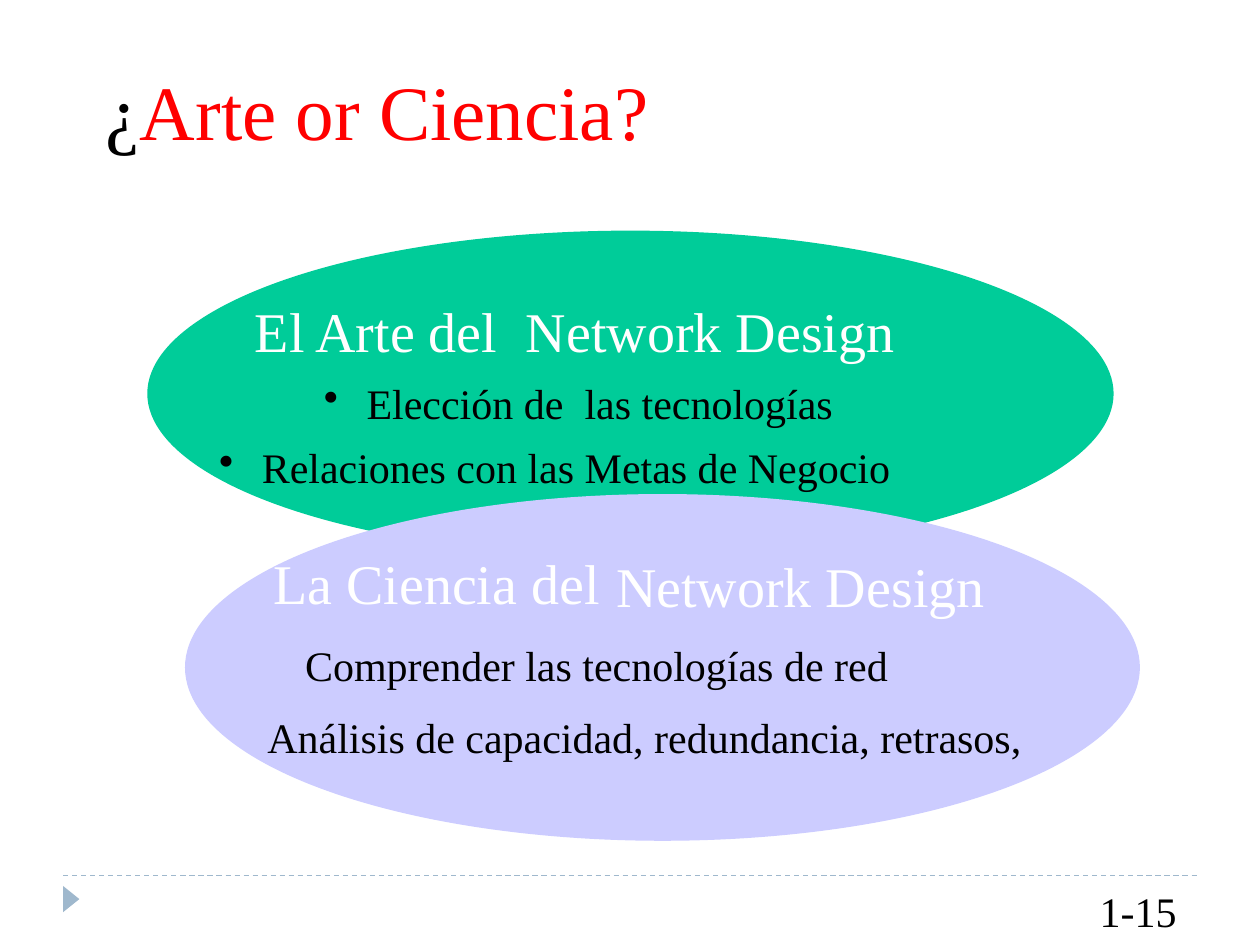
"""Build the slide on the art and science of network design."""
from lxml.etree import SubElement
from pptx import Presentation
from pptx.dml.color import RGBColor
from pptx.enum.dml import MSO_LINE
from pptx.enum.shapes import MSO_CONNECTOR, MSO_SHAPE
from pptx.oxml.ns import qn
from pptx.util import Cm, Pt

BLACK = RGBColor(0, 0, 0)
WHITE = RGBColor(255, 255, 255)
RED = RGBColor(255, 0, 0)
GREEN = RGBColor(0, 0xCC, 0x99)
LILAC = RGBColor(0xCC, 0xCC, 0xFF)
STEEL = RGBColor(0x9F, 0xB8, 0xCD)

FONT = "Times New Roman"
HANG = Cm(0.86)
STYLES = {
    "title": {"size": 44, "line": 46, "before": 2.3, "tall": 1.63},
    "head": {"size": 32, "line": 33.7, "before": 1.7, "tall": 1.19},
    "body": {"size": 24, "line": 25.5, "before": 1.3, "tall": 0.91},
}
SHAPES = [
    (MSO_SHAPE.ISOSCELES_TRIANGLE, (1.17, 17.96, 0.53, 0.33), 90, STEEL),
    (MSO_SHAPE.OVAL, (2.97, 4.65, 19.48, 6.57), 0, GREEN),
    (MSO_SHAPE.OVAL, (3.73, 9.96, 19.25, 6.99), 0, LILAC),
]
TEXTS = [
    ("title", 2.13, 1.52, 11.25, False, [("¿", BLACK, 0), ("Arte or Ciencia?", RED, 0)]),
    ("head", 5.14, 6.15, 15.37, False,
     [("El Arte del", WHITE, 0), (" ", WHITE, 8), ("Network Design", WHITE, 0)]),
    ("body", 6.53, 7.72, 12.52, True,
     [("Elección de", BLACK, 0), (" ", BLACK, 6), ("las tecnologías", BLACK, 0)]),
    ("body", 4.42, 9.02, 16.71, True, [("Relaciones con las Metas de Negocio", BLACK, 0)]),
    ("head", 5.51, 11.23, 7.29, False, [("La Ciencia del", WHITE, 0)]),
    ("head", 12.42, 11.28, 9.17, False, [("Network Design", WHITE, 0)]),
    ("body", 6.15, 13, 15.01, False, [("Comprender las tecnologías de red", BLACK, 0)]),
    ("body", 5.39, 14.45, 19.28, False,
     [("Análisis de capacidad, redundancia, retrasos,", BLACK, 0)]),
    ("body", 22.17, 17.96, 1.75, False, [("1-15", BLACK, 0)]),
]


def apply(item, vals):
    """Set each named value on the item."""
    for name, val in vals.items():
        setattr(item, name, val)


def add_rule(slide):
    """Draw the dashed footer rule."""
    rule = slide.shapes.add_connector(
        MSO_CONNECTOR.STRAIGHT, Cm(1.27), Cm(17.65), Cm(24.13), Cm(17.65))
    rule.line.color.rgb = STEEL
    apply(rule.line, {"width": Pt(0.75), "dash_style": MSO_LINE.DASH})
    SubElement(rule.element.spPr, qn("a:effectLst"))


def add_form(slide, kind, box, turn, color):
    """Draw one plain filled shape."""
    form = slide.shapes.add_shape(kind, *map(Cm, box))
    form.rotation = turn
    form.shadow.inherit = False
    form.fill.solid()
    form.fill.fore_color.rgb = color
    form.line.fill.background()


def add_text(slide, style, left, top, wide, dot, runs):
    """Place one line of text, with a bullet if dot is set."""
    look = STYLES[style]
    frame = slide.shapes.add_textbox(
        Cm(left), Cm(top), Cm(wide), Cm(look["tall"])).text_frame
    apply(frame, {"word_wrap": True, "margin_left": 0, "margin_top": 0,
                  "margin_right": 0, "margin_bottom": 0})
    para = frame.paragraphs[0]
    apply(para, {"line_spacing": Pt(look["line"]), "space_before": Pt(look["before"])})
    if dot:
        props = para._p.get_or_add_pPr()
        props.set("marL", str(HANG))
        props.set("indent", str(-HANG))
        SubElement(props, qn("a:buChar")).set("char", "•")
    for words, color, gap in runs:
        run = para.add_run()
        run.text = words
        apply(run.font, {"name": FONT, "size": Pt(look["size"])})
        run.font.color.rgb = color
        if gap:
            run._r.get_or_add_rPr().set("spc", str(gap * 100))


def main():
    """Build and save the slide."""
    deck = Presentation()
    apply(deck, {"slide_width": Cm(25.4), "slide_height": Cm(19.05)})
    slide = deck.slides.add_slide(deck.slide_layouts[6])
    add_rule(slide)
    for form in SHAPES:
        add_form(slide, *form)
    for text in TEXTS:
        add_text(slide, *text)
    deck.save("out.pptx")


if __name__ == "__main__":
    main()
